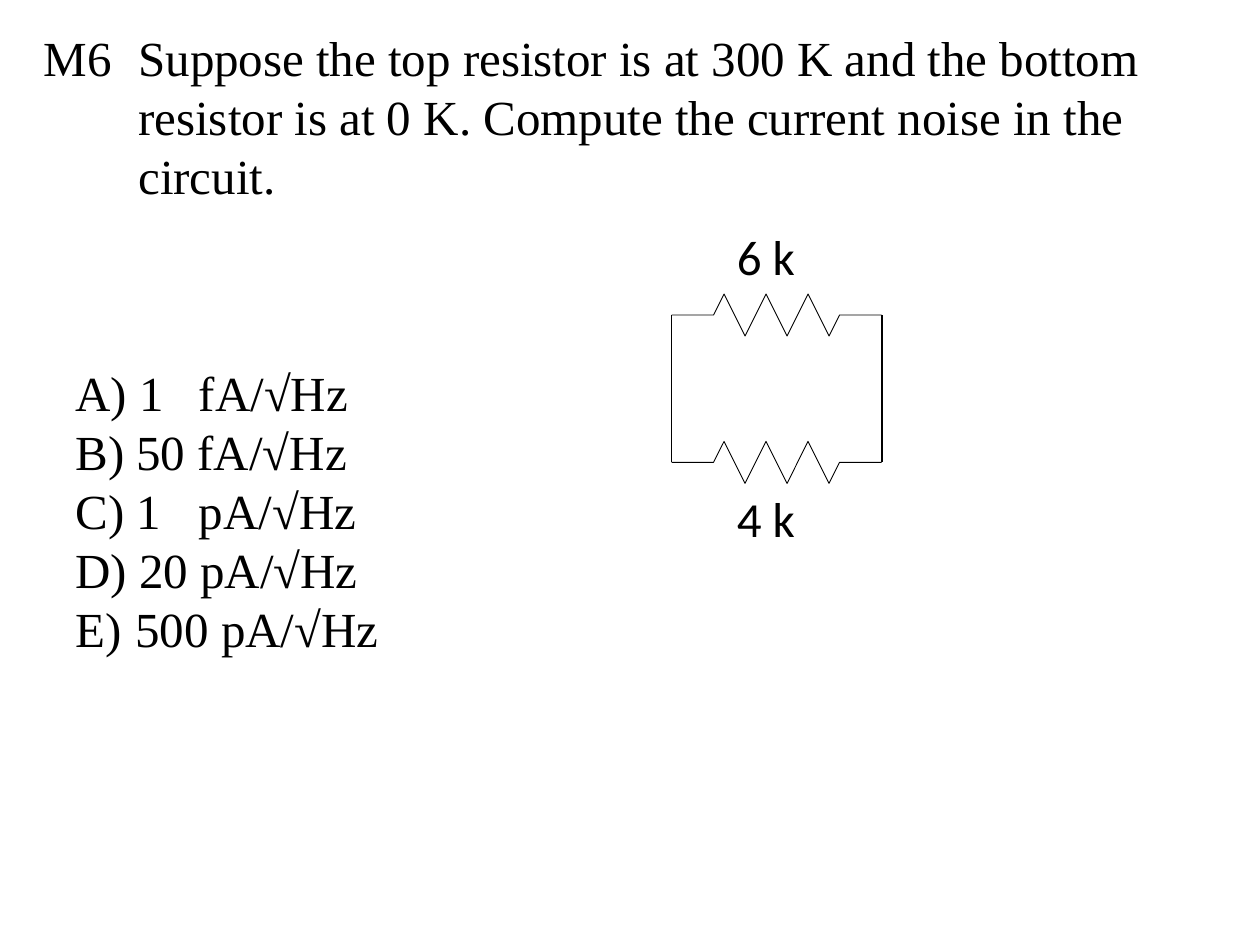
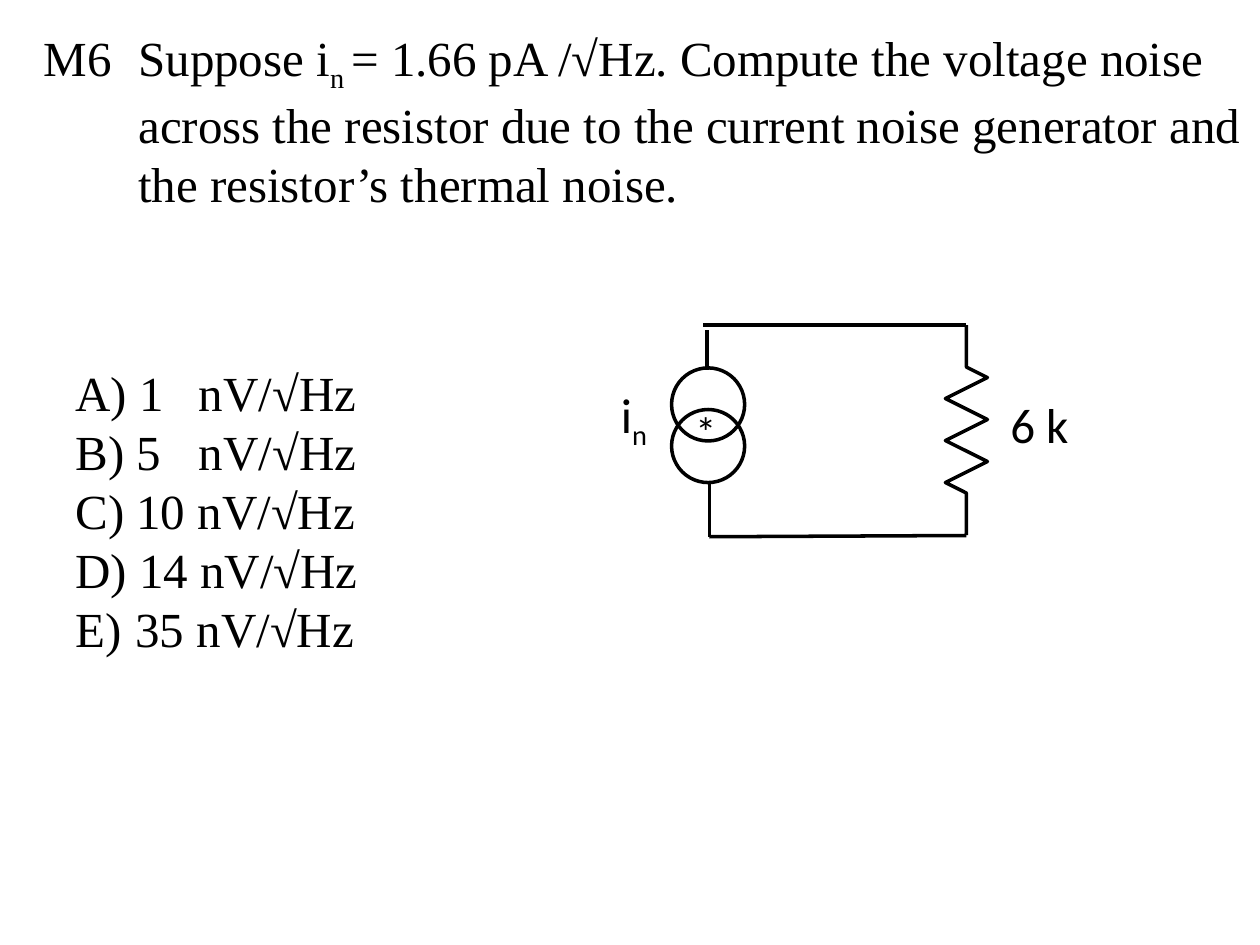
from lxml.etree import SubElement
from pptx import Presentation
from pptx.dml.color import RGBColor
from pptx.enum.shapes import MSO_CONNECTOR as Link, MSO_SHAPE as Shape
from pptx.oxml.ns import qn
from pptx.util import Inches, Pt

COLORS = {"ink": "000000", "paper": "FFFFFF"}
SERIF, SANS = "Times New Roman", "Calibri"
INK = RGBColor.from_string(COLORS["ink"])

# Runs are (text, is subscript); answers are (number, unit) after a letter.
# A tab after a short number lines its unit up with the longer ones.
SLIDES = [
    {
        "stem": [("Suppose the top resistor is at 300 K and the bottom resistor "
                  "is at 0 K. Compute the current noise in the circuit.", False)],
        "answers": ["1\tfA/√Hz", "50 fA/√Hz", "1\tpA/√Hz",
                    "20 pA/√Hz", "500 pA/√Hz"],
        "line": 0.5,
        "resistors": [(5.33, 2.5, False), (5.33, 3.67, False)],
        "wires": [(5.33, 2.5, 5.33, 3.67), (7, 2.5, 7, 3.67)],
        "wire": 0.75,
        "rings": [],
        "labels": [(5.75, 1.75, 0.92, 28, [("6 k", False)]),
                   (5.75, 3.83, 1, 28, [("4 k", False)])],
    },
    {
        "stem": [("Suppose i", False), ("n ", True),
                 ("= 1.66 pA /√Hz. Compute the voltage noise across the resistor "
                  "due to the current noise generator and the resistor’s "
                  "thermal noise.", False)],
        "answers": ["1\tnV/√Hz", "5\tnV/√Hz", "10 nV/√Hz",
                    "14 nV/√Hz", "35 nV/√Hz"],
        "line": 2,
        "resistors": [(7.67, 2.58, True)],
        "wires": [(5.63, 3.82, 5.63, 4.26), (7.67, 2.58, 5.58, 2.58),
                  (7.67, 4.25, 5.63, 4.26), (5.61, 2.62, 5.61, 2.94)],
        "wire": 2,
        "rings": [(5.33, 2.92), (5.33, 3.25)],
        "labels": [(7.92, 3.08, 0.92, 28, [("6 k", False)]),
                   (5.42, 3.17, 0.42, 24, [("*", False)]),
                   (4.83, 3, 0.5, 28, [("i", False), ("n", True)])],
    },
]
RING = 0.58
LEAD, PITCH, SWING, TEETH = 1 / 3, 1 / 6, 1 / 6, 6


def add_text(slide, box, paras, font, size=28, wrap=True):
    """Add a text box; each paragraph is a list of (text, is subscript)."""
    frame = slide.shapes.add_textbox(*map(Inches, box)).text_frame
    frame.word_wrap = wrap
    for i, runs in enumerate(paras):
        para = frame.add_paragraph() if i else frame.paragraphs[0]
        para.font.name, para.font.size = font, Pt(size)
        para.font.color.rgb = INK
        for text, sub in runs:
            run = para.add_run()
            run.text = text
            if sub:
                run._r.get_or_add_rPr().set("baseline", "-25000")
    return frame


def add_answers(slide, answers):
    """Add the choices, lettered A) onward by automatic numbering."""
    paras = [[(" " + answer, False)] for answer in answers]
    frame = add_text(slide, (0.5, 2.83, 4.42, 2.46), paras, SERIF)
    for para in frame.paragraphs:
        props = para._p.get_or_add_pPr()
        props.set("marL", str(Inches(0.38)))
        props.set("indent", str(Inches(-0.38)))
        defaults = props.find(qn("a:defRPr"))
        number = SubElement(props, qn("a:buAutoNum"), type="alphaUcParenR")
        tabs = SubElement(props, qn("a:tabLst"))
        SubElement(tabs, qn("a:tab"), pos=str(Inches(0.98)), algn="l")
        if defaults is not None:
            defaults.addprevious(number)
            defaults.addprevious(tabs)


def style(shape, width):
    shape.shadow.inherit = False
    shape.fill.background()
    shape.line.color.rgb = INK
    shape.line.width = Pt(width)


def add_resistor(slide, x, y, upright, width):
    """Draw a zigzag with a lead at each end, starting at x, y."""
    side = 1 if upright else -1
    teeth = [(LEAD + PITCH * (i + 0.5), side * SWING * (-1) ** i)
             for i in range(TEETH)]
    end = LEAD + PITCH * TEETH
    trace = [(0, 0), (LEAD, 0), *teeth, (end, 0), (end + LEAD, 0)]
    points = [(Inches(x + off), Inches(y + run)) if upright
              else (Inches(x + run), Inches(y + off)) for run, off in trace]
    pen = slide.shapes.build_freeform(*points[0])
    pen.add_line_segments(points[1:], close=False)
    style(pen.convert_to_shape(), width)


def add_wire(slide, ends, width):
    wire = slide.shapes.add_connector(Link.STRAIGHT, *map(Inches, ends))
    wire.line.color.rgb = INK
    wire.line.width = Pt(width)
    SubElement(wire._element.spPr, qn("a:effectLst"))


def build(deck, data):
    slide = deck.slides.add_slide(deck.slide_layouts[6])
    slide.background.fill.solid()
    slide.background.fill.fore_color.rgb = RGBColor.from_string(COLORS["paper"])
    add_text(slide, (0.25, 0.17, 0.75, 0.57), [[("M6", False)]], SERIF, wrap=False)
    add_text(slide, (1, 0.17, 9, 3.87), [data["stem"]], SERIF)
    add_answers(slide, data["answers"])
    for spot in data["resistors"]:
        add_resistor(slide, *spot, data["line"])
    for ends in data["wires"]:
        add_wire(slide, ends, data["wire"])
    for x, y in data["rings"]:
        ring = slide.shapes.add_shape(Shape.OVAL, *map(Inches, (x, y, RING, RING)))
        style(ring, data["line"])
    for x, y, wide, size, runs in data["labels"]:
        add_text(slide, (x, y, wide, 0.57), [runs], SANS, size)


def main():
    deck = Presentation()
    deck.slide_width, deck.slide_height = Inches(10), Inches(7.5)
    for data in SLIDES:
        build(deck, data)
    deck.save("out.pptx")


if __name__ == "__main__":
    main()
